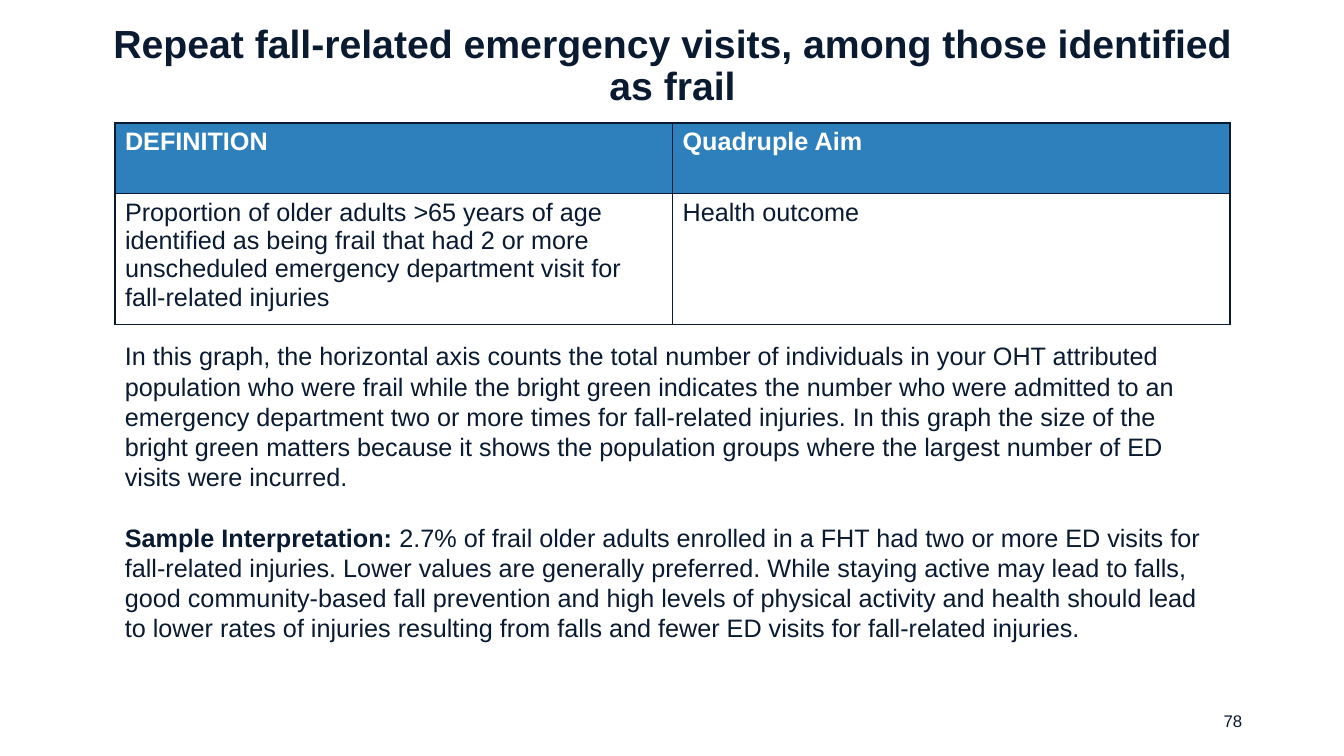
"""Build the slide on repeat fall-related emergency visits."""
from dataclasses import dataclass, field
from typing import Any

from lxml.etree import SubElement
from pptx import Presentation
from pptx.dml.color import RGBColor
from pptx.enum.text import MSO_ANCHOR, PP_ALIGN
from pptx.oxml.ns import qn
from pptx.slide import Slide
from pptx.table import _Cell
from pptx.text.text import TextFrame, _Paragraph
from pptx.util import Inches, Pt

NAVY = RGBColor(0x0A, 0x1A, 0x31)
BLUE = RGBColor(0x2E, 0x80, 0xBD)
WHITE = RGBColor(0xFF, 0xFF, 0xFF)

MARGIN = 1.14
CONTENT_WIDTH = 11.06
ROW_HEIGHTS = (0.7, 1.3)


@dataclass(frozen=True)
class Phrase:
    text: str
    size: int = 18
    bold: bool = False
    color: RGBColor = NAVY


@dataclass(frozen=True)
class Passage:
    phrases: tuple[Phrase, ...]
    layout: dict[str, Any] = field(default_factory=dict)


@dataclass(frozen=True)
class TextBlock:
    left: float
    top: float
    width: float
    height: float
    passages: tuple[Passage, ...]
    anchor: MSO_ANCHOR = MSO_ANCHOR.TOP


BLOCKS = (
    TextBlock(9.42, 6.95, 3, 0.4, (
        Passage((Phrase("78", 12),), {"alignment": PP_ALIGN.RIGHT}),
    ), MSO_ANCHOR.MIDDLE),
    TextBlock(0.77, 0.24, 11.8, 0.84, (
        Passage(
            (Phrase("Repeat fall-related emergency visits, among those identified as frail", 28, True),),
            {"alignment": PP_ALIGN.CENTER, "line_spacing": 0.9, "space_after": Pt(6)},
        ),
    ), MSO_ANCHOR.MIDDLE),
    TextBlock(MARGIN, 3.33, CONTENT_WIDTH, 3.13, (
        Passage((Phrase(
            "In this graph, the horizontal axis counts the total number of individuals in your OHT attributed "
            "population who were frail while the bright green indicates the number who were admitted to an "
            "emergency department two or more times for fall-related injuries. In this graph the size of "
            "the bright green matters because it shows the population groups where the largest number of ED "
            "visits were incurred."
        ),)),
        Passage((
            Phrase("Sample Interpretation: ", bold=True),
            Phrase(
                "2.7% of frail older adults enrolled in a FHT had two or more ED visits for fall-related "
                "injuries. Lower values are generally preferred. While staying active may lead to falls, good "
                "community-based fall prevention and high levels of physical activity and health should lead "
                "to lower rates of injuries resulting from falls and fewer ED visits for fall-related injuries."
            ),
        ), {"space_before": Pt(21.6)}),
    )),
)

DEFINITION_ROWS = (
    (
        Phrase("DEFINITION", bold=True, color=WHITE),
        Phrase("Quadruple Aim", bold=True, color=WHITE),
    ),
    (
        Phrase(
            "Proportion of older adults >65 years of age identified as being frail that had 2 or more "
            "unscheduled emergency department visit for fall-related injuries"
        ),
        Phrase("Health outcome"),
    ),
)


def apply_format(target: Any, values: dict[str, Any]) -> None:
    """Set each named attribute on the target."""
    for name, value in values.items():
        setattr(target, name, value)


def write_phrase(paragraph: _Paragraph, phrase: Phrase) -> None:
    """Append one formatted phrase to a paragraph."""
    run = paragraph.add_run()
    run.text = phrase.text
    apply_format(run.font, {"name": "Arial", "size": Pt(phrase.size), "bold": phrase.bold})
    run.font.color.rgb = phrase.color


def write_passages(frame: TextFrame, passages: tuple[Passage, ...]) -> None:
    """Fill a text frame with one paragraph per passage."""
    for index, passage in enumerate(passages):
        paragraph = frame.add_paragraph() if index else frame.paragraphs[0]
        apply_format(paragraph, passage.layout)
        for phrase in passage.phrases:
            write_phrase(paragraph, phrase)


def draw_block(slide: Slide, block: TextBlock) -> None:
    """Place a wrapped text box on the slide."""
    bounds = map(Inches, (block.left, block.top, block.width, block.height))
    frame = slide.shapes.add_textbox(*bounds).text_frame
    apply_format(frame, {"word_wrap": True, "vertical_anchor": block.anchor})
    write_passages(frame, block.passages)


def outline_cell(cell: _Cell) -> None:
    """Draw a thin navy border on all four sides of a cell."""
    properties = cell._tc.get_or_add_tcPr()
    for position, side in enumerate(("lnL", "lnR", "lnT", "lnB")):
        border = SubElement(properties, qn(f"a:{side}"), w=str(Pt(1)))
        fill = SubElement(border, qn("a:solidFill"))
        SubElement(fill, qn("a:srgbClr"), val=str(NAVY))
        properties.insert(position, border)


def draw_definition_table(slide: Slide) -> None:
    """Place the table holding the definition and its aim."""
    columns = len(DEFINITION_ROWS[0])
    bounds = map(Inches, (MARGIN, 1.22, CONTENT_WIDTH, sum(ROW_HEIGHTS)))
    table = slide.shapes.add_table(len(DEFINITION_ROWS), columns, *bounds).table
    for row_index, phrases in enumerate(DEFINITION_ROWS):
        table.rows[row_index].height = Inches(ROW_HEIGHTS[row_index])
        for column_index, phrase in enumerate(phrases):
            cell = table.cell(row_index, column_index)
            cell.fill.solid()
            cell.fill.fore_color.rgb = WHITE if row_index else BLUE
            write_passages(cell.text_frame, (Passage((phrase,)),))
            outline_cell(cell)


def main() -> None:
    """Assemble and save the slide."""
    presentation = Presentation()
    apply_format(presentation, {"slide_width": Inches(13.33), "slide_height": Inches(7.5)})
    slide = presentation.slides.add_slide(presentation.slide_layouts[6])
    draw_definition_table(slide)
    for block in BLOCKS:
        draw_block(slide, block)
    presentation.save("out.pptx")


if __name__ == "__main__":
    main()
